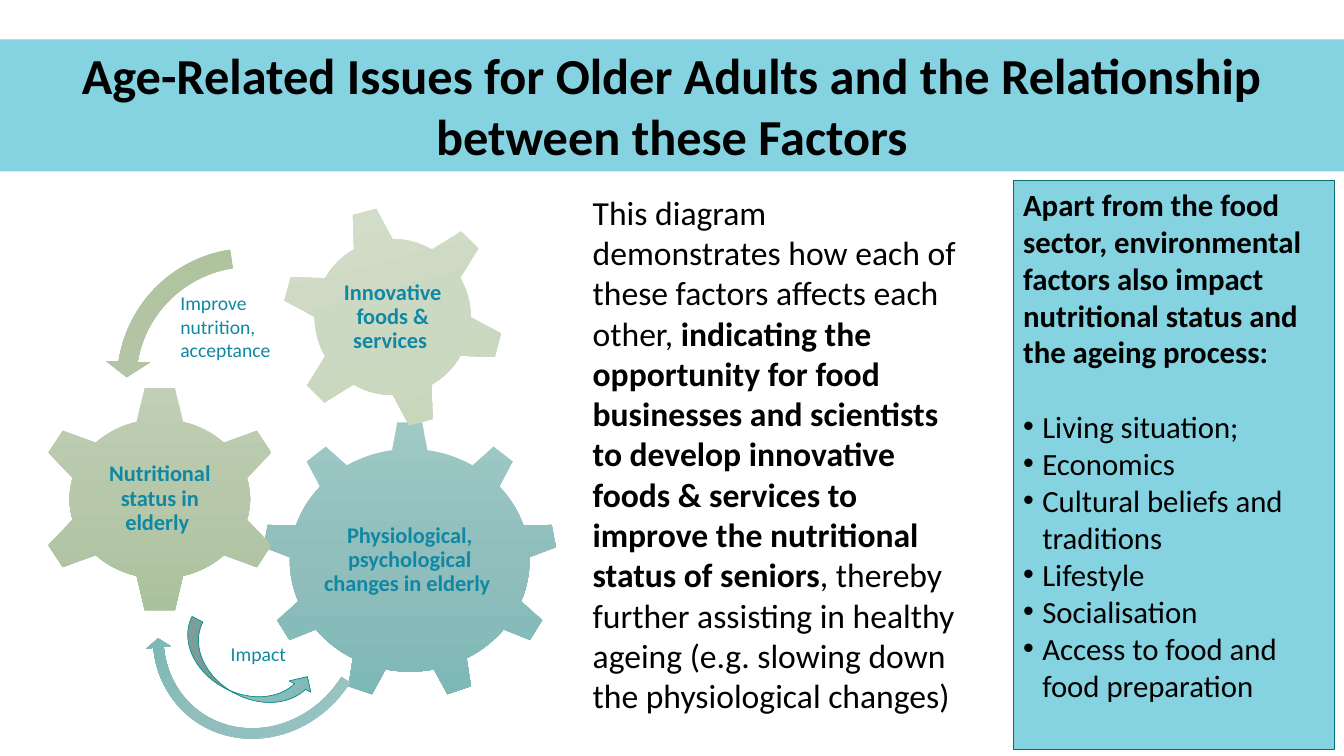
from dataclasses import dataclass

from lxml.etree import SubElement
from pptx import Presentation
from pptx.dml.color import RGBColor
from pptx.enum.shapes import MSO_SHAPE
from pptx.enum.text import MSO_ANCHOR, MSO_AUTO_SIZE, PP_ALIGN
from pptx.oxml.ns import qn
from pptx.util import Emu, Inches, Pt


@dataclass(frozen=True)
class Theme:
    font: str = "Calibri"
    ink: str = "000000"
    accent: str = "1188A3"
    band: str = "85D2E1"
    panel_line: str = "086D6E"
    arrow_line: str = "0D9390"
    teal: tuple = ("9EC9C7", "90BEBC", "7CB8B5")
    sage: tuple = ("C1CFB6", "B6C7AA", "ABC19C")
    pale: tuple = ("D6E0CD", "CCD9C2", "C6D5B9")
    leaf: tuple = ("ACC199", "B6C7AA", "ABC19C")
    title: int = 36
    body: int = 24
    panel: int = 22
    gear: int = 16
    note: int = 14


@dataclass(frozen=True)
class Box:
    """Place and size in percent of the slide's width and height."""
    x: float
    y: float
    w: float
    h: float

    def inner(self, w_share, h_share):
        w, h = self.w * w_share, self.h * h_share
        return Box(self.x + (self.w - w) / 2, self.y + (self.h - h) / 2, w, h)

    def emu(self):
        return (Emu(int(W * self.x / 100)), Emu(int(H * self.y / 100)),
                Emu(int(W * self.w / 100)), Emu(int(H * self.h / 100)))


@dataclass(frozen=True)
class Figure:
    kind: MSO_SHAPE
    box: Box
    colors: tuple
    stops: tuple = (0, 50, 100)
    rotation: float = 0
    adjust: tuple = ()
    line: str = ""
    label: str = ""
    label_share: tuple = (1, 1)


T = Theme()
W, H = Inches(13.33), Inches(7.5)

FIGURES = [
    Figure(MSO_SHAPE.GEAR_9, Box(19.5, 55.73, 21.98, 36.8), T.teal,
           label="Physiological, psychological changes in elderly ", label_share=(0.61, 0.51)),
    Figure(MSO_SHAPE.GEAR_6, Box(2.63, 50.93, 18.53, 30.13), T.sage,
           label="Nutritional status in elderly ", label_share=(0.51, 0.49)),
    Figure(MSO_SHAPE.GEAR_6, Box(20.93, 27.2, 16.58, 29.47), T.pale, rotation=345,
           label="Innovative foods & services ", label_share=(0.56, 0.56)),
    Figure(MSO_SHAPE.CIRCULAR_ARROW, Box(10.43, 68.4, 17.93, 29.47), T.teal, (1, 50, 67),
           127.3, (0.047, 2.99, 25.352, 158.209, 0.055)),
    Figure(MSO_SHAPE.LEFT_CIRCULAR_ARROW, Box(7.8, 31.2, 21.6, 38.4), T.leaf, (0, 75, 100),
           14.1, (0.065, 4.3, 104.891, 148.378, 0.075)),
    Figure(MSO_SHAPE.CURVED_RIGHT_ARROW, Box(16.35, 79.33, 3.6, 18.8), T.teal,
           rotation=297.6, line=T.arrow_line),
]

BODY = [
    ("This diagram demonstrates how each of these factors affects each other,", False),
    (" indicating the opportunity for food businesses and scientists to develop innovative "
     "foods & services to improve the nutritional status of seniors", True),
    (", thereby further assisting in healthy ageing (e.g. slowing down the physiological "
     "changes)", False),
]
PANEL_HEAD = ("Apart from the food sector, environmental factors also impact nutritional "
              "status and the ageing process:")
PANEL_ITEMS = ["Living situation;", "Economics", "Cultural beliefs and traditions",
               "Lifestyle", "Socialisation", "Access to food and food preparation"]


def add_run(p, text: str, size: int, color: str, bold: bool = False) -> None:
    r = p.add_run()
    r.text = text
    r.font.name, r.font.size, r.font.bold = T.font, Pt(size), bold
    r.font.color.rgb = RGBColor.from_string(color)


def add_text(s, box: Box, wrap: bool = True):
    tf = s.shapes.add_textbox(*box.emu()).text_frame
    tf.word_wrap = wrap
    return tf


def set_line(sp, color: str) -> None:
    if color:
        sp.line.color.rgb = RGBColor.from_string(color)
        sp.line.width = Pt(0.5)
    else:
        sp.line.fill.background()


def set_gradient(sp, colors: tuple, stops: tuple) -> None:
    sp.fill.gradient()
    sp.fill.gradient_angle = 270
    gs_lst = next(sp._element.spPr.iter(qn("a:gsLst")))
    for gs in list(gs_lst):
        gs_lst.remove(gs)
    for color, stop in zip(colors, stops):
        gs = SubElement(gs_lst, qn("a:gs"), pos=str(stop * 1000))
        SubElement(gs, qn("a:srgbClr"), val=color)


def add_figure(s, f: Figure) -> None:
    sp = s.shapes.add_shape(f.kind, *f.box.emu())
    sp.shadow.inherit = False
    sp.rotation = f.rotation
    for i, value in enumerate(f.adjust):
        sp.adjustments[i] = value
    set_gradient(sp, f.colors, f.stops)
    set_line(sp, f.line)
    if f.label:
        tf = add_text(s, f.box.inner(*f.label_share))
        tf.vertical_anchor = MSO_ANCHOR.MIDDLE
        tf.margin_left = tf.margin_right = tf.margin_top = tf.margin_bottom = Inches(0.02)
        p = tf.paragraphs[0]
        p.alignment, p.line_spacing = PP_ALIGN.CENTER, 0.9
        add_run(p, f.label, T.gear, T.accent, True)


def add_note(s, box: Box, lines: list[str], wrap: bool = True) -> None:
    tf = add_text(s, box, wrap)
    for i, line in enumerate(lines):
        p = tf.add_paragraph() if i else tf.paragraphs[0]
        add_run(p, line, T.note, T.accent)


def add_title(s, text: str) -> None:
    sp = s.shapes.title
    sp.left, sp.top, sp.width, sp.height = Box(0, 5.2, 100, 17.47).emu()
    sp.fill.solid()
    sp.fill.fore_color.rgb = RGBColor.from_string(T.band)
    tf = sp.text_frame
    tf.word_wrap, tf.auto_size = True, MSO_AUTO_SIZE.NONE
    tf.vertical_anchor = MSO_ANCHOR.TOP
    p = tf.paragraphs[0]
    p.alignment, p.line_spacing = PP_ALIGN.CENTER, 1.0
    add_run(p, text, T.title, T.ink, True)


def add_panel(s) -> None:
    sp = s.shapes.add_shape(MSO_SHAPE.RECTANGLE, *Box(75.39, 23.87, 23.93, 75.33).emu())
    sp.shadow.inherit = False
    sp.fill.solid()
    sp.fill.fore_color.rgb = RGBColor.from_string(T.band)
    set_line(sp, T.panel_line)
    tf = sp.text_frame
    tf.word_wrap, tf.vertical_anchor = True, MSO_ANCHOR.TOP
    p = tf.paragraphs[0]
    p.alignment = PP_ALIGN.LEFT
    add_run(p, PANEL_HEAD, T.panel, T.ink, True)
    for i, item in enumerate(PANEL_ITEMS):
        p = tf.add_paragraph()
        p.alignment = PP_ALIGN.LEFT
        if i == 0:
            p.space_before = Pt(T.panel * 1.22)
        pPr = p._p.get_or_add_pPr()
        pPr.set("marL", str(Inches(0.19)))
        pPr.set("indent", str(-Inches(0.19)))
        SubElement(pPr, qn("a:buFont"), typeface="Arial")
        SubElement(pPr, qn("a:buChar"), char="•")
        add_run(p, item, T.panel, T.ink)


def main() -> None:
    prs = Presentation()
    prs.slide_width, prs.slide_height = W, H
    s = prs.slides.add_slide(prs.slide_layouts[5])
    add_title(s, "Age-Related Issues for Older Adults and the Relationship "
                 "between these Factors")

    # Gear diagram with its arrows and notes
    for f in FIGURES:
        add_figure(s, f)
    add_note(s, Box(12.68, 37.87, 9.3, 13.87), ["Improve", "nutrition,", "acceptance"])
    add_note(s, Box(16.43, 84.27, 6, 4.53), ["Impact"], wrap=False)

    # Explanation
    p = add_text(s, Box(43.36, 24.67, 28.58, 71.33)).paragraphs[0]
    for text, bold in BODY:
        add_run(p, text, T.body, T.ink, bold)

    # Environmental factors
    add_panel(s)
    prs.save("out.pptx")


if __name__ == "__main__":
    main()
